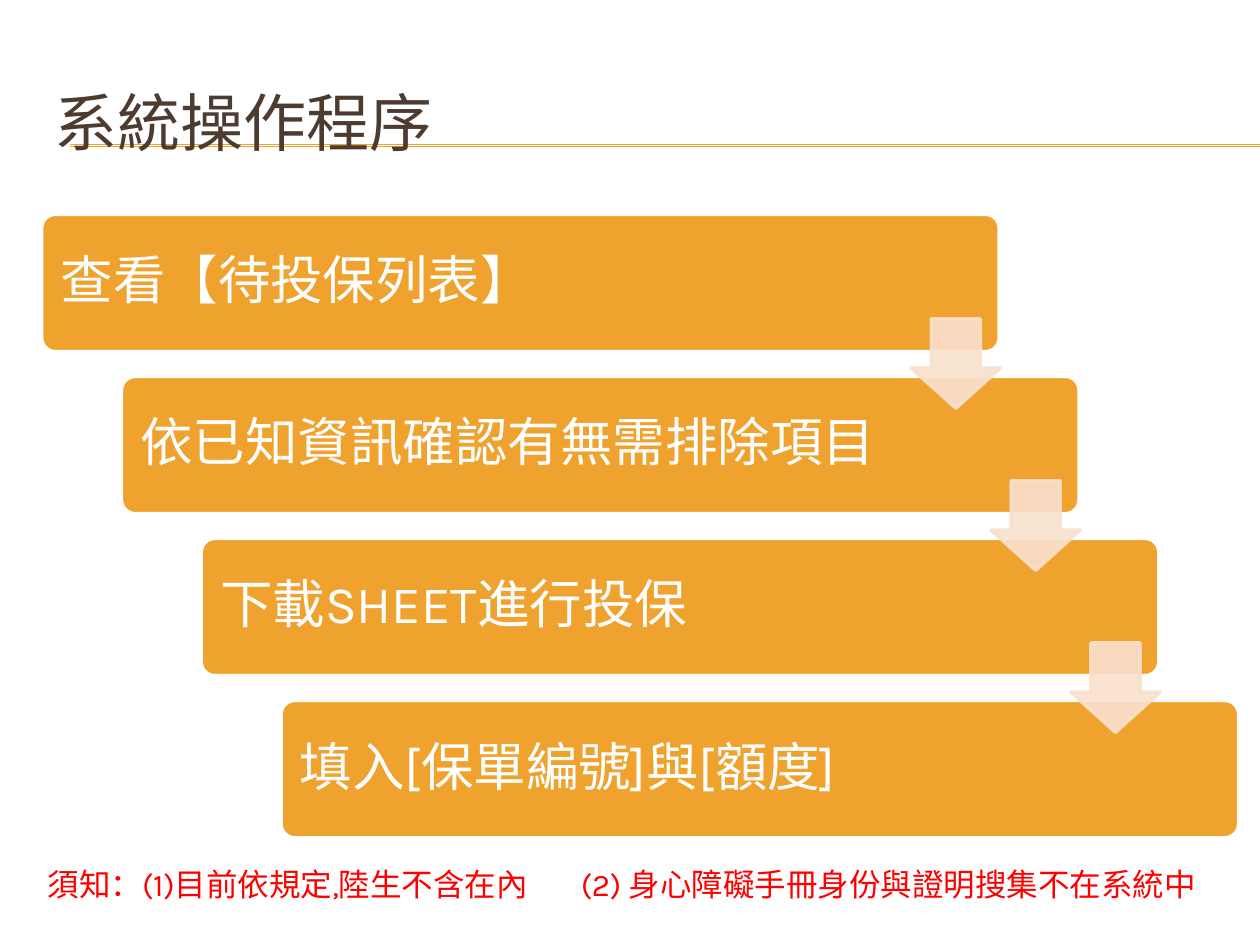
from lxml import etree
from pptx import Presentation
from pptx.dml.color import RGBColor
from pptx.enum.shapes import MSO_CONNECTOR, MSO_SHAPE
from pptx.enum.text import MSO_ANCHOR, PP_ALIGN
from pptx.oxml.ns import qn
from pptx.util import Cm, Pt

LATIN, CJK = "Karla", "Noto Sans CJK TC"
ORANGE, PEACH, BROWN, RED, WHITE = "F0A22E", "F9E0CD", "4E3B30", "FF0000", "FFFFFF"

# Each step is a list of (text, font) runs
STEPS = [
    [("查看", LATIN), ("【", CJK), ("待投保列表", LATIN), ("】", CJK)],
    [("依已知資訊確認有無需排除項目", LATIN)],
    [("下載SHEET進行投保", LATIN)],
    [("填入[保單編號]與[額度]", LATIN)],
]
NOTE = "須知：(1)目前依規定,陸生不含在內\t(2) 身心障礙手冊身份與證明搜集不在系統中"


def rgb(value):
    return RGBColor.from_string(value)


def add_text(slide, x, y, w, h, text, size, color, anchor, tab=None):
    tf = slide.shapes.add_textbox(Cm(x), Cm(y), Cm(w), Cm(h)).text_frame
    tf.word_wrap = True
    tf.vertical_anchor = anchor
    p = tf.paragraphs[0]
    if tab:
        tabs = etree.SubElement(p._p.get_or_add_pPr(), qn("a:tabLst"))
        etree.SubElement(tabs, qn("a:tab"), pos=str(Cm(tab)), algn="l")
    p.text = text
    p.font.name, p.font.size = LATIN, Pt(size)
    p.font.color.rgb = rgb(color)


def add_block(slide, kind, x, y, w, h, fill, line):
    sp = slide.shapes.add_shape(kind, Cm(x), Cm(y), Cm(w), Cm(h))
    sp.shadow.inherit = False
    sp.fill.solid()
    sp.fill.fore_color.rgb = rgb(fill)
    sp.line.color.rgb = rgb(line)
    sp.line.width = Pt(2)
    return sp


def add_header(slide, x, y, w, h):
    # Double rule running to the right edge, behind the title
    for rule_y in (y + 1.65, y + 1.68):
        rule = slide.shapes.add_connector(
            MSO_CONNECTOR.STRAIGHT, Cm(x + 0.58), Cm(rule_y), Cm(25.4), Cm(rule_y))
        rule.line.color.rgb = rgb(ORANGE)
        rule.line.width = Pt(0.75)
        etree.SubElement(rule._element.spPr, qn("a:effectLst"))
    add_text(slide, x, y, w, h, "系統操作程序", 36, BROWN, MSO_ANCHOR.MIDDLE)


def add_step(slide, x, y, w, h, runs):
    sp = add_block(slide, MSO_SHAPE.ROUNDED_RECTANGLE, x, y, w, h, ORANGE, WHITE)
    sp.adjustments[0] = 0.1
    tf = sp.text_frame
    tf.word_wrap = True
    tf.vertical_anchor = MSO_ANCHOR.MIDDLE
    tf.margin_left = tf.margin_right = tf.margin_top = tf.margin_bottom = Cm(0.3)
    p = tf.paragraphs[0]
    p.alignment = PP_ALIGN.LEFT
    p.line_spacing = 0.9
    p.font.size = Pt(30)
    p.font.color.rgb = rgb(WHITE)
    for text, font in runs:
        r = p.add_run()
        r.text = text
        r.font.name = font
        r.font.size = Pt(30)
        r.font.color.rgb = rgb(WHITE)


def add_arrow(slide, x, y, size):
    sp = add_block(slide, MSO_SHAPE.DOWN_ARROW, x, y, size, size, PEACH, PEACH)
    sp.adjustments[0], sp.adjustments[1] = 0.55, 0.45
    # 90% opacity on fill and outline
    for color in sp._element.spPr.iter(qn("a:srgbClr")):
        etree.SubElement(color, qn("a:alpha"), val="90000")


def add_staircase(slide, x, y, w, h):
    step_w, step_h, arrow = 0.8 * w, 2.77, 1.8
    gaps = len(STEPS) - 1
    dx, dy = (w - step_w) / gaps, (h - step_h) / gaps
    for i, runs in enumerate(STEPS):
        add_step(slide, x + i * dx, y + i * dy, step_w, step_h, runs)
    # Each arrow bridges a step's right end and the next step
    for i in range(gaps):
        add_arrow(slide, x + i * dx + 17.53, y + i * dy + 2.11, arrow)


def main():
    prs = Presentation()
    prs.slide_width, prs.slide_height = Cm(25.4), Cm(19.05)
    s = prs.slides.add_slide(prs.slide_layouts[6])
    add_header(s, 0.84, 1.27, 24.13, 2.34)
    add_staircase(s, 0.84, 4.32, 24.13, 12.57)
    # Footnote
    add_text(s, 0.71, 17.32, 24.41, 1.02, NOTE, 18, RED, MSO_ANCHOR.TOP, tab=10.75)
    prs.save("out.pptx")


if __name__ == "__main__":
    main()
